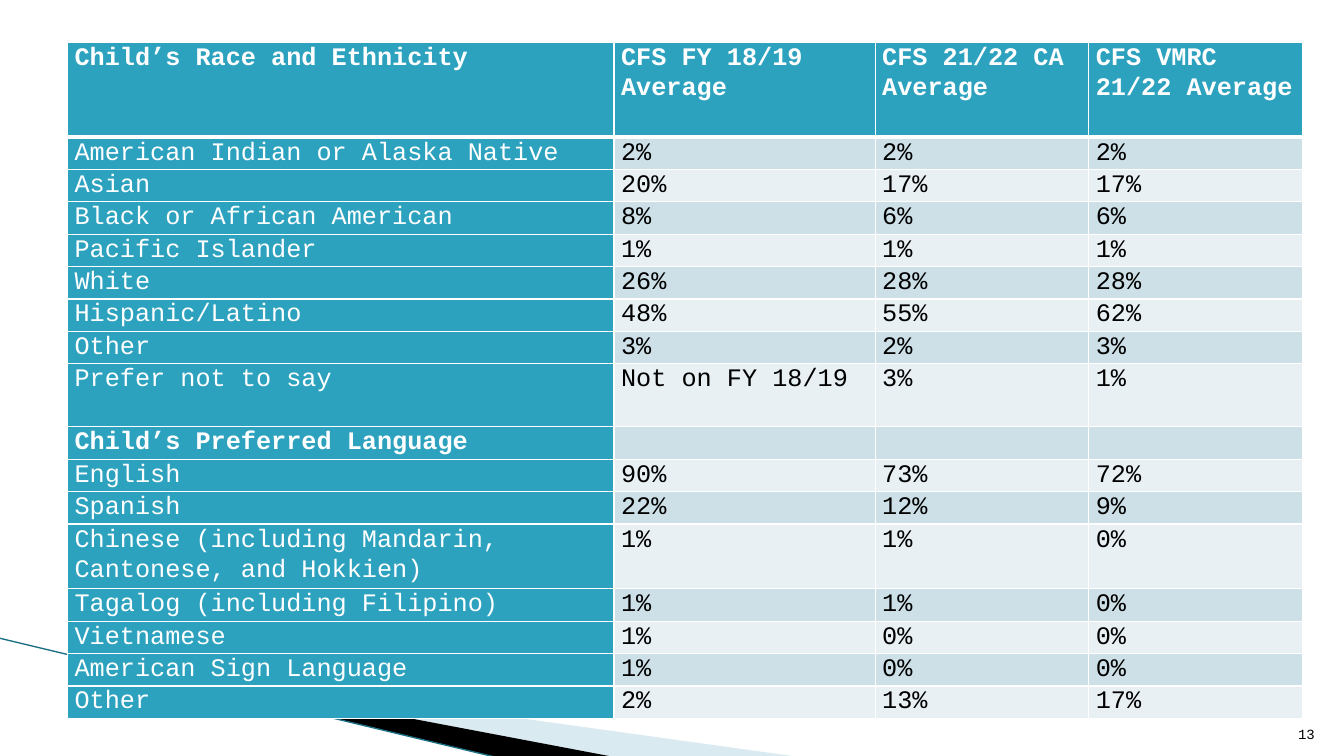
from dataclasses import dataclass

from lxml import etree
from pptx import Presentation
from pptx.dml.color import RGBColor
from pptx.enum.text import MSO_ANCHOR, PP_ALIGN
from pptx.oxml.ns import qn
from pptx.slide import Slide
from pptx.table import _Cell
from pptx.text.text import _Paragraph
from pptx.util import Inches, Pt

ANCHOR_BOTTOM = MSO_ANCHOR.BOTTOM
ALIGN_RIGHT = PP_ALIGN.RIGHT
BLANK_LAYOUT = 6


@dataclass(frozen=True)
class Theme:
    font: str = "Courier New"
    table_size: int = 18
    number_size: int = 10
    line_spacing: float = 1.07
    white: str = "FFFFFF"
    black: str = "000000"
    teal: str = "2DA2BF"
    dark_band: str = "CDE0E8"
    light_band: str = "E8F0F4"
    pale_wedge: str = "A0CBDC"
    edge_line: str = "1B7083"


@dataclass(frozen=True)
class Wedge:
    points: tuple[tuple[float, float], ...]
    color: str
    opacity: int = 100


@dataclass(frozen=True)
class SurveyRow:
    label: str
    values: tuple[str, ...] = ("", "", "")
    lines: float = 1
    bold: bool = False


THEME = Theme()

WEDGES = (
    Wedge(((0.73, 6.51), (7.93, 7.51), (6.08, 7.51), (0.73, 6.5)), THEME.pale_wedge, 40),
    Wedge(((0.71, 6.49), (6.09, 7.51), (4.96, 7.52), (0.72, 6.5)), THEME.black),
)

COLUMN_WIDTHS = (5.42, 2.59, 2.12, 2.12)
LINE_HEIGHT = 0.94 / 3

ROWS = (
    SurveyRow(
        "Child’s Race and Ethnicity",
        ("CFS FY 18/19 Average", "CFS 21/22 CA Average", "CFS VMRC 21/22 Average"),
        lines=3,
        bold=True,
    ),
    SurveyRow("American Indian or Alaska Native", ("2%", "2%", "2%")),
    SurveyRow("Asian", ("20%", "17%", "17%")),
    SurveyRow("Black or African American", ("8%", "6%", "6%")),
    SurveyRow("Pacific Islander", ("1%", "1%", "1%")),
    SurveyRow("White", ("26%", "28%", "28%")),
    SurveyRow("Hispanic/Latino", ("48%", "55%", "62%")),
    SurveyRow("Other", ("3%", "2%", "3%")),
    SurveyRow("Prefer not to say", ("Not on FY 18/19", "3%", "1%"), lines=2),
    SurveyRow("Child’s Preferred Language", bold=True),
    SurveyRow("English", ("90%", "73%", "72%")),
    SurveyRow("Spanish", ("22%", "12%", "9%")),
    SurveyRow("Chinese (including Mandarin, Cantonese, and Hokkien)", ("1%", "1%", "0%"), lines=2),
    SurveyRow("Tagalog (including Filipino)", ("1%", "1%", "0%")),
    SurveyRow("Vietnamese", ("1%", "0%", "0%")),
    SurveyRow("American Sign Language", ("1%", "0%", "0%"), lines=0.95),
    SurveyRow("Other", ("2%", "13%", "17%")),
)


def add_text(paragraph: _Paragraph, text: str, size: int, color: str, bold: bool = False) -> None:
    run = paragraph.add_run()
    run.text = text
    run.font.name = THEME.font
    run.font.size = Pt(size)
    run.font.bold = bold
    run.font.color.rgb = RGBColor.from_string(color)


def add_wedge(slide: Slide, wedge: Wedge) -> None:
    points = [(Inches(x), Inches(y)) for x, y in wedge.points]
    builder = slide.shapes.build_freeform(*points[0])
    builder.add_line_segments(points[1:], close=True)
    shape = builder.convert_to_shape()
    shape.shadow.inherit = False
    shape.line.fill.background()
    shape.fill.solid()
    shape.fill.fore_color.rgb = RGBColor.from_string(wedge.color)
    if wedge.opacity < 100:
        color = shape.fill._xPr.find(qn("a:solidFill"))[0]
        etree.SubElement(color, qn("a:alpha"), val=str(wedge.opacity * 1000))


def add_edge_line(slide: Slide) -> None:
    line = slide.shapes.add_connector(1, Inches(-0.01), Inches(6.33), Inches(4.95), Inches(7.52))
    line.line.color.rgb = RGBColor.from_string(THEME.edge_line)
    line.line.width = Pt(0.95)
    etree.SubElement(line._element.spPr, qn("a:effectLst"))


def add_borders(cell: _Cell, row_index: int) -> None:
    # The rule under the header row is heavier than the others
    widths = {
        "L": 1,
        "R": 1,
        "T": 3 if row_index == 1 else 1,
        "B": 3 if row_index == 0 else 1,
    }
    properties = cell._tc.get_or_add_tcPr()
    for side, width in widths.items():
        border = etree.SubElement(properties, qn(f"a:ln{side}"), w=str(Pt(width)))
        fill = etree.SubElement(border, qn("a:solidFill"))
        etree.SubElement(fill, qn("a:srgbClr"), val=THEME.white)


def fill_cell(cell: _Cell, text: str, row_index: int, is_heading: bool, bold: bool) -> None:
    cell.margin_left = cell.margin_right = Inches(0.07)
    cell.margin_top = cell.margin_bottom = 0
    add_borders(cell, row_index)
    band = THEME.dark_band if row_index % 2 else THEME.light_band
    cell.fill.solid()
    cell.fill.fore_color.rgb = RGBColor.from_string(THEME.teal if is_heading else band)
    if text:
        paragraph = cell.text_frame.paragraphs[0]
        paragraph.line_spacing = THEME.line_spacing
        color = THEME.white if is_heading else THEME.black
        add_text(paragraph, text, THEME.table_size, color, bold)


def add_survey_table(slide: Slide) -> None:
    heights = [Inches(row.lines * LINE_HEIGHT) for row in ROWS]
    table = slide.shapes.add_table(
        len(ROWS), len(COLUMN_WIDTHS), Inches(0.67), Inches(0.42),
        Inches(sum(COLUMN_WIDTHS)), sum(heights),
    ).table
    table.first_col = True
    for column, width in zip(table.columns, COLUMN_WIDTHS):
        column.width = Inches(width)
    for row_index, (row, height) in enumerate(zip(ROWS, heights)):
        table.rows[row_index].height = height
        for column_index, text in enumerate((row.label, *row.values)):
            is_heading = row_index == 0 or column_index == 0
            fill_cell(table.cell(row_index, column_index), text, row_index, is_heading, row.bold)


def add_page_number(slide: Slide) -> None:
    box = slide.shapes.add_textbox(Inches(12.61), Inches(7.01), Inches(0.53), Inches(0.4))
    frame = box.text_frame
    frame.word_wrap = True
    frame.vertical_anchor = ANCHOR_BOTTOM
    paragraph = frame.paragraphs[0]
    paragraph.alignment = ALIGN_RIGHT
    add_text(paragraph, "13", THEME.number_size, THEME.black)


def main() -> None:
    presentation = Presentation()
    presentation.slide_width = Inches(13.33)
    presentation.slide_height = Inches(7.5)
    slide = presentation.slides.add_slide(presentation.slide_layouts[BLANK_LAYOUT])

    # Corner decoration
    for wedge in WEDGES:
        add_wedge(slide, wedge)
    add_edge_line(slide)

    # Content
    add_page_number(slide)
    add_survey_table(slide)
    presentation.save("out.pptx")


if __name__ == "__main__":
    main()
